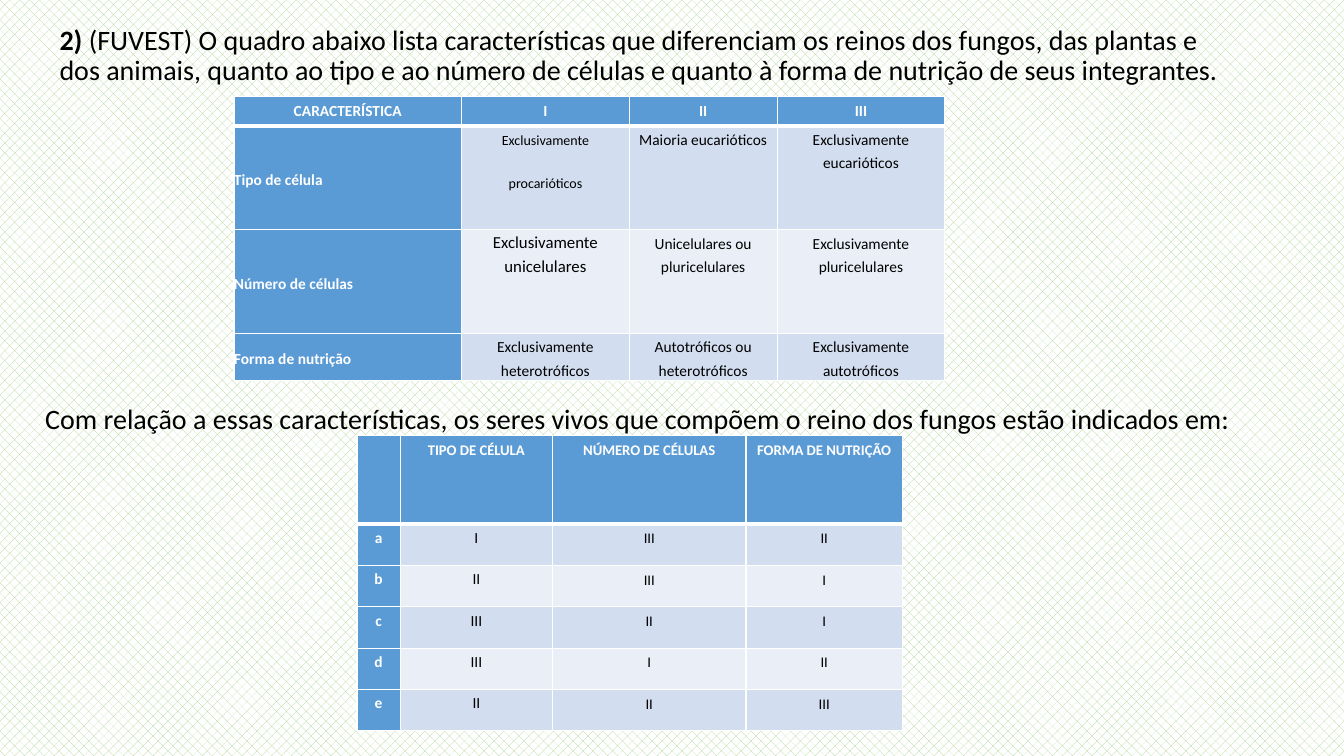
from lxml import etree
from pptx import Presentation
from pptx.dml.color import RGBColor
from pptx.enum.dml import MSO_PATTERN
from pptx.enum.text import MSO_ANCHOR, PP_ALIGN
from pptx.oxml.ns import qn
from pptx.util import Inches, Pt

CENTER, LEFT = PP_ALIGN.CENTER, PP_ALIGN.LEFT
MIDDLE, TOP = MSO_ANCHOR.MIDDLE, MSO_ANCHOR.TOP
PERCENT_30 = MSO_PATTERN.PERCENT_30
COLORS = {"blue": "5B9BD5", "light": "D2DEEF", "pale": "EAEFF7",
          "white": "FFFFFF", "black": "000000", "green": "A9D18E"}


def color(name):
    return RGBColor.from_string(COLORS[name])


def write(paragraph, text, size=20, ink="black", bold=False, align=LEFT,
          line=None, before=None, after=None):
    """Append a formatted run and set the paragraph's alignment and spacing."""
    paragraph.alignment = align
    paragraph.line_spacing = line
    paragraph.space_before = before
    paragraph.space_after = after
    run = paragraph.add_run()
    run.text = text
    run.font.name = "Calibri"
    run.font.size = Pt(size)
    run.font.bold = bold
    run.font.color.rgb = color(ink)


presentation = Presentation()
presentation.slide_width = Inches(13.33)
presentation.slide_height = Inches(7.5)
slide = presentation.slides.add_slide(presentation.slide_layouts[1])

background = slide.background.fill
background.patterned()
background.pattern = PERCENT_30
background.fore_color.rgb = color("green")
background.back_color.rgb = color("white")

# Question
title = slide.shapes.title
title.element.getparent().remove(title.element)
question = slide.placeholders[1]
question.left, question.top = Inches(0.49), Inches(0.21)
question.width, question.height = Inches(11.92), Inches(6.5)
paragraph = question.text_frame.paragraphs[0]
spacing = {"line": 0.9, "before": Pt(10)}
write(paragraph, "2)", bold=True, **spacing)
write(paragraph, " (FUVEST) O quadro abaixo lista características que diferenciam "
      "os reinos dos fungos, das plantas e dos animais, quanto ao tipo e ao número "
      "de células e quanto à forma de nutrição de seus integrantes.", **spacing)
properties = paragraph._p.get_or_add_pPr()
properties.set("marL", "0")
properties.set("indent", "0")
etree.SubElement(properties, qn("a:buNone"))

# Prompt for the answers
prompt = slide.shapes.add_textbox(Inches(0.35), Inches(3.93), Inches(12.21), Inches(0.74))
prompt.text_frame.word_wrap = True
write(prompt.text_frame.paragraphs[0], "Com relação a essas características, os seres "
      "vivos que compõem o reino dos fungos estão indicados em:")

# Tables: text sizes follow the rows and columns of each table
features = {
    "position": (2.32, 0.96),
    "columns": [2.26, 1.66, 1.47, 1.66],
    "rows": [0.29, 1.03, 1.03, 0.23],
    "label_align": LEFT, "label_anchor": MIDDLE, "after": Pt(13.5),
    "sizes": [[11] * 4, [11, 10, 11, 11], [11, 12, 11, 11], [11] * 4],
    "texts": [
        ["CARACTERÍSTICA", "I", "II", "III"],
        ["Tipo de célula", "Exclusivamente\nprocarióticos",
         "Maioria eucarióticos", "Exclusivamente eucarióticos"],
        ["Número de células", "Exclusivamente unicelulares",
         "Unicelulares ou pluricelulares", "Exclusivamente pluricelulares"],
        ["Forma de nutrição", "Exclusivamente heterotróficos",
         "Autotróficos ou heterotróficos", "Exclusivamente autotróficos"],
    ],
}
answers = {
    "position": (3.54, 4.32),
    "columns": [0.43, 1.51, 1.92, 1.55],
    "rows": [0.88] + [0.41] * 5,
    "label_align": CENTER, "label_anchor": TOP, "after": None,
    "sizes": [[10.5] * 4] + [[11, 11, 10.5, 10.5]] * 5,
    "texts": [
        ["", "TIPO DE CÉLULA", "NÚMERO DE CÉLULAS", "FORMA DE NUTRIÇÃO"],
        ["a", "I", "III", "II"],
        ["b", "II", "III", "I"],
        ["c", "III", "II", "I"],
        ["d", "III", "I", "II"],
        ["e", "II", "II", "III"],
    ],
}

for data in (features, answers):
    left, top = data["position"]
    widths, heights = data["columns"], data["rows"]
    table = slide.shapes.add_table(
        len(heights), len(widths), Inches(left), Inches(top),
        Inches(sum(widths)), Inches(sum(heights))).table
    table.first_col = True
    for column, width in zip(table.columns, widths):
        column.width = Inches(width)
    for row, height in zip(table.rows, heights):
        row.height = Inches(height)

    for row_index, texts in enumerate(data["texts"]):
        for column_index, text in enumerate(texts):
            cell = table.cell(row_index, column_index)
            is_header = row_index == 0
            is_label = column_index == 0 and not is_header
            cell.margin_left = cell.margin_right = 0
            cell.margin_top = cell.margin_bottom = 0
            cell.vertical_anchor = data["label_anchor"] if is_label else TOP

            thick_side = {0: "lnB", 1: "lnT"}.get(row_index)
            for side in ("lnL", "lnR", "lnT", "lnB"):
                border = etree.SubElement(cell._tc.get_or_add_tcPr(), qn(f"a:{side}"))
                border.set("w", str(Pt(3 if side == thick_side else 1)))
                fill = etree.SubElement(border, qn("a:solidFill"))
                etree.SubElement(fill, qn("a:srgbClr")).set("val", COLORS["white"])

            strong = is_header or is_label
            band = "light" if row_index % 2 else "pale"
            cell.fill.solid()
            cell.fill.fore_color.rgb = color("blue" if strong else band)

            for number, part in enumerate(text.split("\n") if text else []):
                frame = cell.text_frame
                paragraph = frame.add_paragraph() if number else frame.paragraphs[0]
                write(paragraph, part, bold=strong,
                      size=data["sizes"][row_index][column_index],
                      ink="white" if strong else "black",
                      align=data["label_align"] if is_label else CENTER,
                      line=Pt(16.8), after=None if strong else data["after"])

presentation.save("out.pptx")
